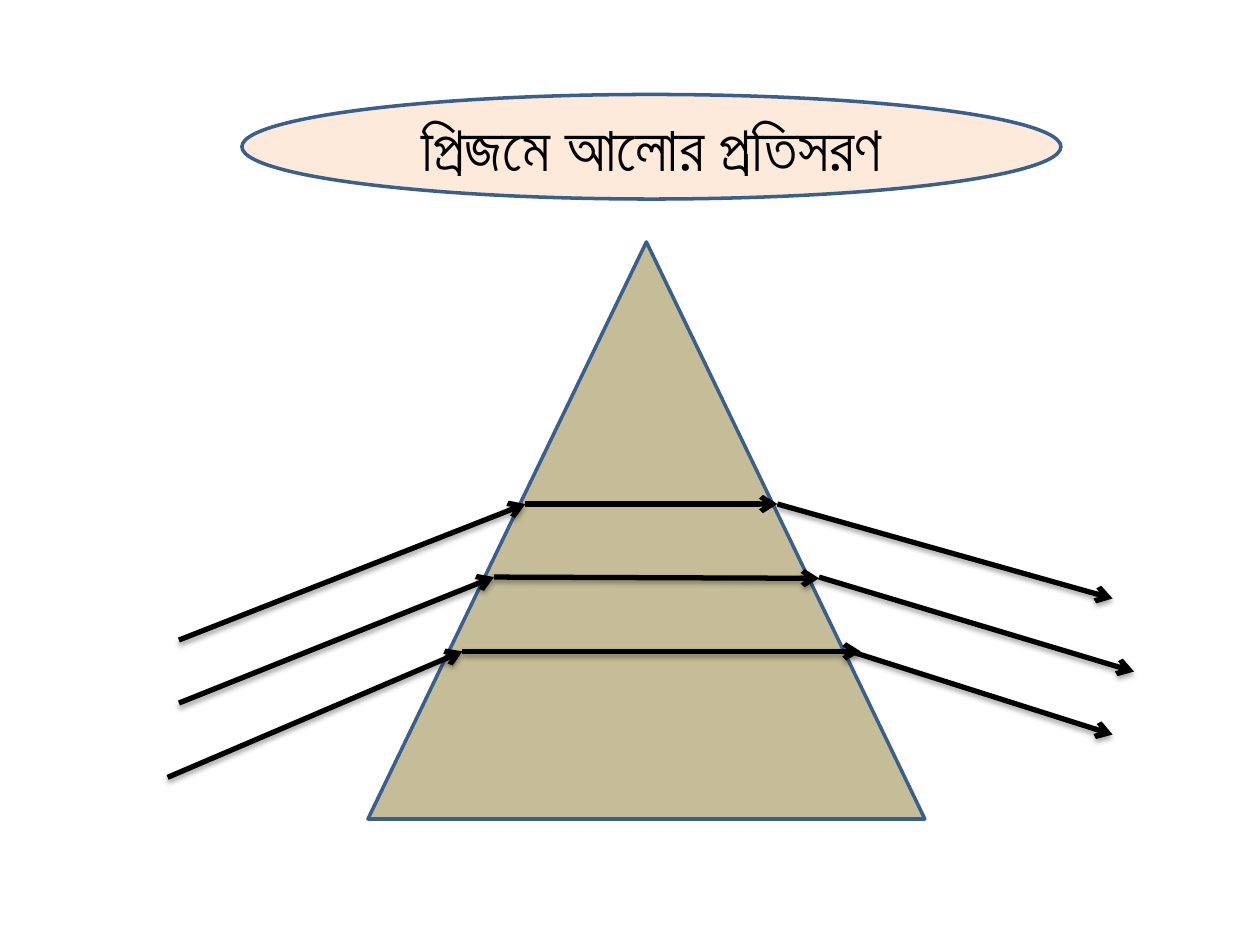
from lxml.etree import SubElement
from pptx import Presentation
from pptx.dml.color import RGBColor
from pptx.enum.shapes import MSO_CONNECTOR, MSO_SHAPE
from pptx.enum.text import MSO_ANCHOR, PP_ALIGN
from pptx.oxml.ns import qn
from pptx.util import Inches, Pt

BLACK = RGBColor(0x00, 0x00, 0x00)
OUTLINE = RGBColor(0x3A, 0x5F, 0x8C)
PRISM = RGBColor(0xC4, 0xBD, 0x97)
PEACH = RGBColor(0xFD, 0xEA, 0xDA)

TITLE = "প্রিজমে আলোর প্রতিসরণ"

# Each light ray: the (start, end) of its incoming, inner and outgoing parts
RAYS = [
    [((1.42, 5.08), (4.17, 4)), ((4.17, 4), (6.17, 4)), ((6.17, 4), (8.83, 4.75))],
    [((1.42, 5.58), (3.92, 4.58)), ((3.92, 4.58), (6.5, 4.59)), ((6.5, 4.58), (9, 5.33))],
    [((1.33, 6.17), (3.67, 5.17)), ((3.67, 5.17), (6.83, 5.17)), ((6.75, 5.17), (8.83, 5.83))],
]
UNSHADOWED = (0, 1)  # ray, part


def add_outlined_shape(slide, kind, box, fill):
    shape = slide.shapes.add_shape(kind, *map(Inches, box))
    shape.shadow.inherit = False
    shape.fill.solid()
    shape.fill.fore_color.rgb = fill
    shape.line.color.rgb = OUTLINE
    shape.line.width = Pt(2)
    return shape


def add_arrow(slide, start, end, shadowed):
    arrow = slide.shapes.add_connector(
        MSO_CONNECTOR.STRAIGHT, *map(Inches, start + end))
    arrow.line.color.rgb = BLACK
    arrow.line.width = Pt(3)
    properties = arrow.element.spPr
    SubElement(properties.find(qn("a:ln")), qn("a:tailEnd"), type="arrow")
    effects = SubElement(properties, qn("a:effectLst"))
    if shadowed:
        shadow = SubElement(
            effects, qn("a:outerShdw"), blurRad=str(Pt(3.1)), dist=str(Pt(1.8)),
            dir="5400000", rotWithShape="0")
        color = SubElement(shadow, qn("a:srgbClr"), val=str(BLACK))
        SubElement(color, qn("a:alpha"), val="35000")


presentation = Presentation()
presentation.slide_width = Inches(10)
presentation.slide_height = Inches(7.5)
slide = presentation.slides.add_slide(presentation.slide_layouts[6])

# Prism
add_outlined_shape(slide, MSO_SHAPE.ISOSCELES_TRIANGLE, (2.92, 1.92, 4.42, 4.58), PRISM)

# Light rays
for ray_index, ray in enumerate(RAYS):
    for part_index, (start, end) in enumerate(ray):
        add_arrow(slide, start, end, (ray_index, part_index) != UNSHADOWED)

# Title
title = add_outlined_shape(slide, MSO_SHAPE.OVAL, (1.92, 0.75, 6.5, 0.83), PEACH)
title.text_frame.word_wrap = True
title.text_frame.vertical_anchor = MSO_ANCHOR.MIDDLE
paragraph = title.text_frame.paragraphs[0]
paragraph.alignment = PP_ALIGN.CENTER
run = paragraph.add_run()
run.text = TITLE
run.font.name = "Calibri"
run.font.size = Pt(36)
run.font.color.rgb = BLACK

presentation.save("out.pptx")
